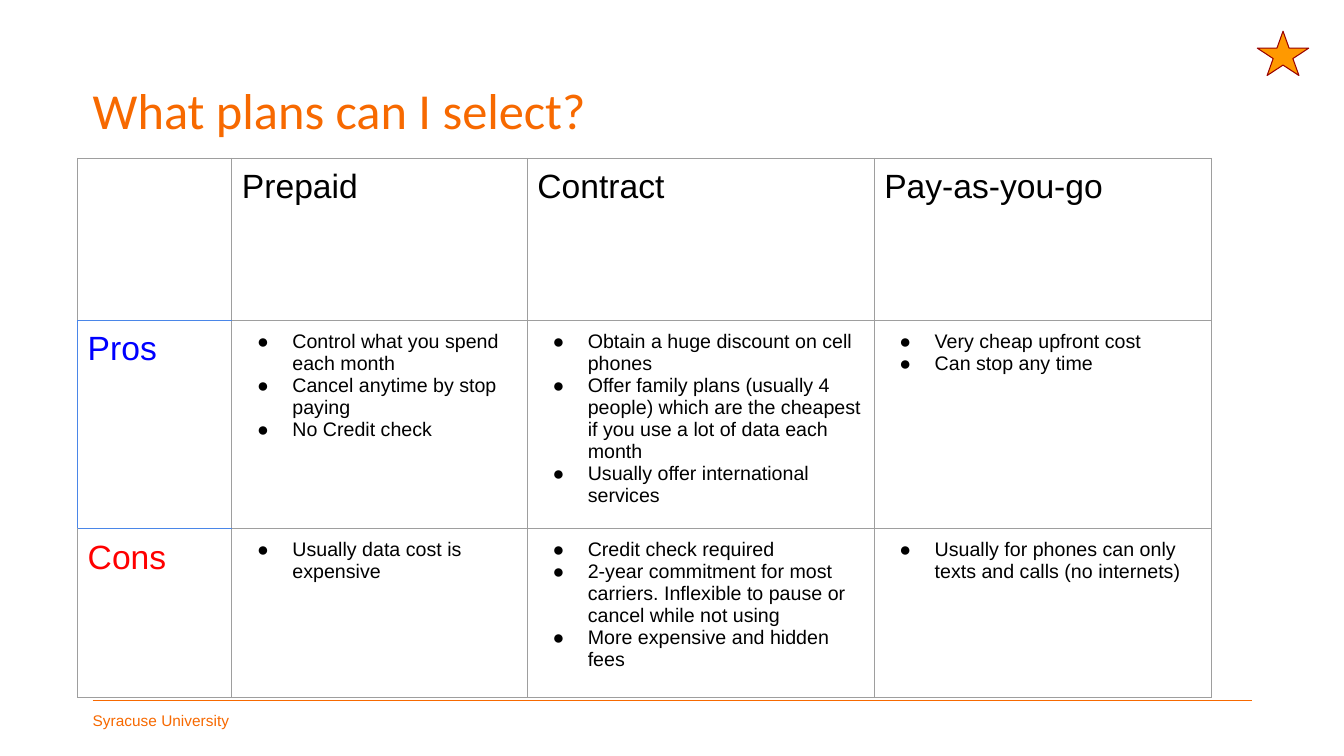
"""Build the slide that compares the pros and cons of three phone plans."""
from dataclasses import dataclass

import lxml.etree
import pptx
import pptx.dml.color
import pptx.enum.shapes
import pptx.enum.text
import pptx.oxml
import pptx.oxml.ns
import pptx.util

WIDTH = pptx.util.Inches(13.33)
HEIGHT = pptx.util.Inches(7.5)


@dataclass(frozen=True)
class Theme:
    orange: str = "F76900"
    black: str = "000000"
    blue: str = "0000FF"
    red: str = "FF0000"
    grid: str = "9E9E9E"
    grid_accent: str = "4A86E8"
    star: str = "FF9900"
    star_edge: str = "980000"
    title_font: str = "Calibri"
    body_font: str = "Arial"
    title_size: float = 36
    heading_size: float = 24
    bullet_size: float = 14
    footer_size: float = 11
    line_width: float = 0.75


THEME = Theme()


@dataclass(frozen=True)
class Box:
    left: float
    top: float
    width: float
    height: float

    def lengths(self) -> tuple:
        return across(self.left), down(self.top), across(self.width), down(self.height)


@dataclass(frozen=True)
class Entry:
    lines: tuple = ()
    color: str = THEME.black
    bulleted: bool = False
    accents: str = ""


def across(percent: float) -> pptx.util.Emu:
    return pptx.util.Emu(round(WIDTH * percent / 100))


def down(percent: float) -> pptx.util.Emu:
    return pptx.util.Emu(round(HEIGHT * percent / 100))


def rgb(color: str) -> pptx.dml.color.RGBColor:
    return pptx.dml.color.RGBColor.from_string(color)


def bullets(*lines: str) -> Entry:
    return Entry(lines, bulleted=True)


TITLE_BOX = Box(6.9, 5.33, 86.27, 19.33)
FOOTER_BOX = Box(6.9, 94.13, 10.2, 2.4)
STAR_BOX = Box(93.55, 4.13, 3.83, 5.87)
RULE_TOP = 92.67
TABLE_LEFT, TABLE_TOP = 5.78, 20.93
COLUMNS = (11.48, 21.98, 25.81, 25.13)
ROWS = (21.47, 22.27, 22.27)
CELL_MARGIN = across(0.75)
BULLET_INDENT, BULLET_HANG = across(3.75), across(2.62)

PLANS = (
    (
        Entry(accents="B"),
        Entry(("Prepaid",)),
        Entry(("Contract",)),
        Entry(("Pay-as-you-go",)),
    ),
    (
        Entry(("Pros",), THEME.blue, accents="LRTB"),
        bullets("Control what you spend each month", "Cancel anytime by stop paying", "No Credit check"),
        bullets(
            "Obtain a huge discount on cell phones",
            "Offer family plans (usually 4 people) which are the cheapest if you use a lot of data each month",
            "Usually offer international services",
        ),
        bullets("Very cheap upfront cost", "Can stop any time"),
    ),
    (
        Entry(("Cons",), THEME.red, accents="T"),
        bullets("Usually data cost is expensive"),
        bullets(
            "Credit check required",
            "2-year commitment for most carriers. Inflexible to pause or cancel while not using",
            "More expensive and hidden fees",
        ),
        bullets("Usually for phones can only texts and calls (no internets)"),
    ),
)


def style(paragraph, size: float, color: str, font: str = THEME.body_font) -> None:
    paragraph.font.size = pptx.util.Pt(size)
    paragraph.font.name = font
    paragraph.font.color.rgb = rgb(color)


def add_bullet(paragraph) -> None:
    properties = paragraph._p.get_or_add_pPr()
    properties.set("marL", str(BULLET_INDENT))
    properties.set("indent", str(-BULLET_HANG))
    namespace = pptx.oxml.ns.nsdecls("a")
    for xml in (
        f'<a:buClr {namespace}><a:srgbClr val="{THEME.black}"/></a:buClr>',
        f'<a:buFont {namespace} typeface="{THEME.body_font}"/>',
        f'<a:buChar {namespace} char="●"/>',
    ):
        properties.append(pptx.oxml.parse_xml(xml))


def add_borders(cell, accents: str) -> None:
    properties = cell._tc.get_or_add_tcPr()
    for side in "LRTB":
        color = THEME.grid_accent if side in accents else THEME.grid
        properties.append(pptx.oxml.parse_xml(
            f'<a:ln{side} {pptx.oxml.ns.nsdecls("a")} w="{pptx.util.Pt(THEME.line_width)}">'
            f'<a:solidFill><a:srgbClr val="{color}"/></a:solidFill></a:ln{side}>'
        ))


def fill_cell(cell, entry: Entry) -> None:
    add_borders(cell, entry.accents)
    cell.fill.background()
    cell.margin_left = cell.margin_right = cell.margin_top = cell.margin_bottom = CELL_MARGIN
    cell.text = "\n".join(entry.lines)
    for paragraph in cell.text_frame.paragraphs:
        if entry.bulleted:
            add_bullet(paragraph)
        style(paragraph, THEME.bullet_size if entry.bulleted else THEME.heading_size, entry.color)


def add_plans(slide) -> None:
    box = Box(TABLE_LEFT, TABLE_TOP, sum(COLUMNS), sum(ROWS))
    table = slide.shapes.add_table(len(ROWS), len(COLUMNS), *box.lengths()).table
    table.first_row = table.horz_banding = False
    for column, share in zip(table.columns, COLUMNS):
        column.width = across(share)
    for row, share, entries in zip(table.rows, ROWS, PLANS):
        row.height = down(share)
        for cell, entry in zip(row.cells, entries):
            fill_cell(cell, entry)


def add_title(slide) -> None:
    title = slide.shapes.title
    title.left, title.top, title.width, title.height = TITLE_BOX.lengths()
    frame = title.text_frame
    frame.text = "What plans can I select?"
    frame.margin_left = frame.margin_right = 0
    frame.auto_size = pptx.enum.text.MSO_AUTO_SIZE.NONE
    frame.vertical_anchor = pptx.enum.text.MSO_ANCHOR.MIDDLE
    paragraph = frame.paragraphs[0]
    paragraph.alignment = pptx.enum.text.PP_ALIGN.LEFT
    paragraph.line_spacing = 0.9
    style(paragraph, THEME.title_size, THEME.orange, THEME.title_font)


def add_footer(slide) -> None:
    left, right, top = across(TITLE_BOX.left), across(TITLE_BOX.left + TITLE_BOX.width), down(RULE_TOP)
    rule = slide.shapes.add_connector(pptx.enum.shapes.MSO_CONNECTOR.STRAIGHT, left, top, right, top)
    rule.line.color.rgb = rgb(THEME.orange)
    rule.line.width = pptx.util.Pt(THEME.line_width)
    lxml.etree.SubElement(rule._element.spPr, pptx.oxml.ns.qn("a:effectLst"))
    frame = slide.shapes.add_textbox(*FOOTER_BOX.lengths()).text_frame
    frame.text = "Syracuse University"
    frame.margin_left = frame.margin_right = frame.margin_top = frame.margin_bottom = 0
    frame.vertical_anchor = pptx.enum.text.MSO_ANCHOR.MIDDLE
    style(frame.paragraphs[0], THEME.footer_size, THEME.orange)


def add_star(slide) -> None:
    star = slide.shapes.add_shape(pptx.enum.shapes.MSO_SHAPE.STAR_5_POINT, *STAR_BOX.lengths())
    star.shadow.inherit = False
    star.fill.solid()
    star.fill.fore_color.rgb = rgb(THEME.star)
    star.line.color.rgb = rgb(THEME.star_edge)
    star.line.width = pptx.util.Pt(THEME.line_width)


def main() -> None:
    presentation = pptx.Presentation()
    presentation.slide_width, presentation.slide_height = WIDTH, HEIGHT
    slide = presentation.slides.add_slide(presentation.slide_layouts[5])
    for add_part in (add_footer, add_title, add_star, add_plans):
        add_part(slide)
    presentation.save("out.pptx")


if __name__ == "__main__":
    main()
